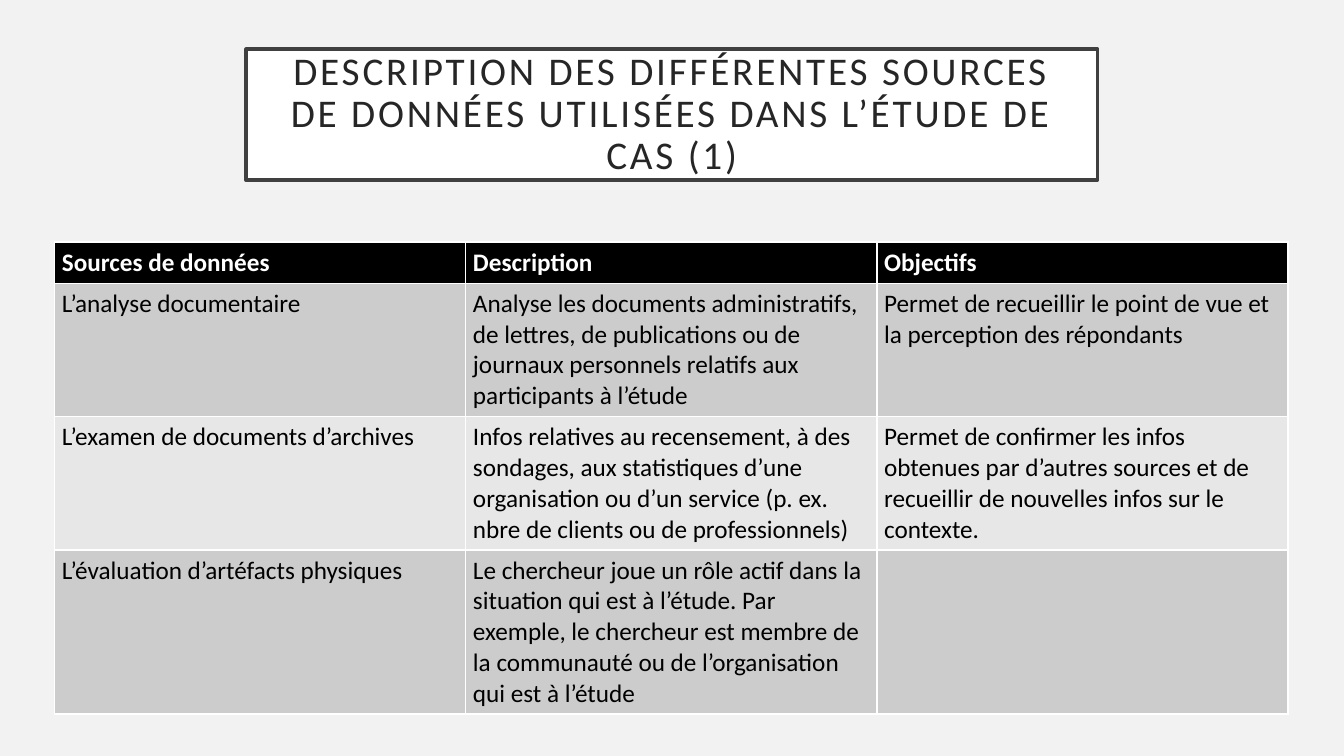
import pptx
import pptx.util
import pptx.dml.color
import pptx.enum.text

Cm = pptx.util.Cm
Pt = pptx.util.Pt
RGB = pptx.dml.color.RGBColor.from_string
ENUM = pptx.enum.text

TITLE = "DESCRIPTION DES DIFFÉRENTES SOURCES DE DONNÉES UTILISÉES DANS L’ÉTUDE DE CAS (1)"
ROWS = [
    ("Sources de données", "Description", "Objectifs"),
    (
        "L’analyse documentaire",
        "Analyse les documents administratifs, de lettres, de publications ou de journaux personnels relatifs aux participants à l’étude",
        "Permet de recueillir le point de vue et la perception des répondants",
    ),
    (
        "L’examen de documents d’archives",
        "Infos relatives au recensement, à des sondages, aux statistiques d’une organisation ou d’un service (p. ex. nbre de clients ou de professionnels)",
        "Permet de confirmer les infos obtenues par d’autres sources et de recueillir de nouvelles infos sur le contexte.",
    ),
    (
        "L’évaluation d’artéfacts physiques",
        "Le chercheur joue un rôle actif dans la situation qui est à l’étude. Par exemple, le chercheur est membre de la communauté ou de l’organisation qui est à l’étude",
        "",
    ),
]
HEIGHTS = [1.03, 3.36, 3.36, 4.13]
WIDTH = 10.36
COLORS = {
    "page": "F2F2F2", "white": "FFFFFF", "frame": "404040", "title": "262626",
    "black": "000000", "odd": "CCCCCC", "even": "E7E7E7",
}
PLACE = {"left": Cm(6.2), "top": Cm(1.24), "width": Cm(21.46), "height": Cm(3.3)}
FRAME = {
    "word_wrap": True,
    "auto_size": ENUM.MSO_AUTO_SIZE.NONE,
    "vertical_anchor": ENUM.MSO_ANCHOR.MIDDLE,
    "margin_left": Cm(0.51), "margin_right": Cm(0.51),
    "margin_top": Cm(0.51), "margin_bottom": Cm(0.51),
}
LINES = {"alignment": ENUM.PP_ALIGN.CENTER, "line_spacing": 0.9}
CELL = {
    "margin_left": Cm(0.18), "margin_right": Cm(0.18),
    "margin_top": Cm(0.13), "margin_bottom": Cm(0.13),
}


def apply(item, values):
    for name, value in values.items():
        setattr(item, name, value)


def paint(fill, color):
    fill.solid()
    fill.fore_color.rgb = RGB(COLORS[color])


def style(font, size, color, bold=False):
    apply(font, {"name": "Calibri", "size": Pt(size), "bold": bold})
    font.color.rgb = RGB(COLORS[color])


def add_title(slide):
    title = slide.shapes.title
    apply(title, PLACE)
    paint(title.fill, "white")
    paint(title.line.fill, "frame")
    title.line.width = Pt(2.5)
    apply(title.text_frame, FRAME)
    para = title.text_frame.paragraphs[0]
    apply(para, LINES)
    run = para.add_run()
    run.text = TITLE
    style(run.font, 28, "title")
    run._r.get_or_add_rPr().set("spc", "200")


def add_grid(slide):
    cols = len(ROWS[0])
    grid = slide.shapes.add_table(
        len(ROWS), cols, Cm(1.38), Cm(6.1), Cm(WIDTH * cols), Cm(sum(HEIGHTS))
    ).table
    for col in grid.columns:
        col.width = Cm(WIDTH)
    for r, texts in enumerate(ROWS):
        grid.rows[r].height = Cm(HEIGHTS[r])
        head = r == 0
        back = "black" if head else "odd" if r % 2 else "even"
        for c, text in enumerate(texts):
            cell = grid.cell(r, c)
            apply(cell, CELL)
            paint(cell.fill, back)
            if text:
                run = cell.text_frame.paragraphs[0].add_run()
                run.text = text
                style(run.font, 18, "white" if head else "black", head)


def main():
    deck = pptx.Presentation()
    apply(deck, {"slide_width": Cm(33.87), "slide_height": Cm(19.05)})
    slide = deck.slides.add_slide(deck.slide_layouts.get_by_name("Title Only"))
    paint(slide.background.fill, "page")
    add_title(slide)
    add_grid(slide)
    deck.save("out.pptx")


if __name__ == "__main__":
    main()
